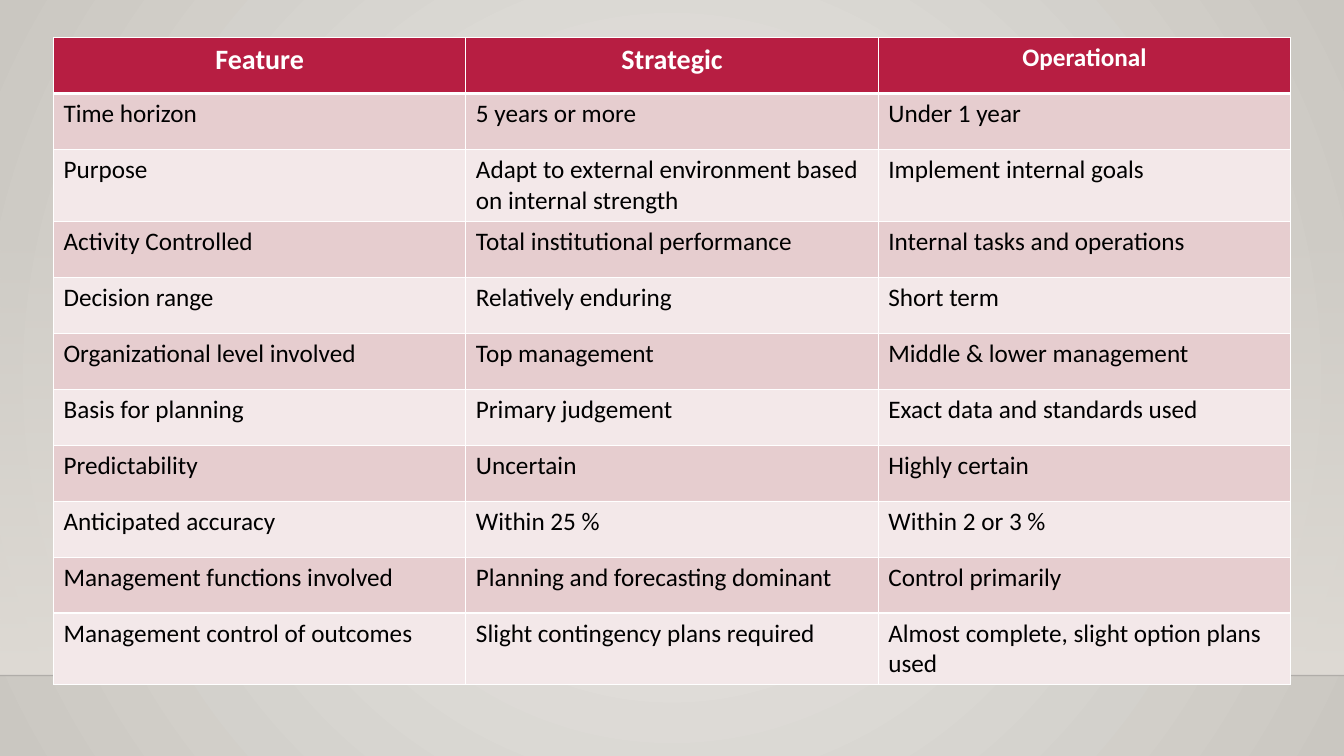
"""Build a slide with a table comparing strategic and operational planning."""
from lxml.etree import SubElement
from pptx import Presentation
from pptx.dml.color import RGBColor
from pptx.enum.shapes import MSO_CONNECTOR, MSO_SHAPE
from pptx.enum.text import PP_ALIGN
from pptx.oxml.ns import qn
from pptx.util import Pt

HEADINGS = [("Feature", 20), ("Strategic", 20), ("Operational", 18)]
FEATURES = [
    ("Time horizon", "5 years or more", "Under 1 year"),
    ("Purpose", "Adapt to external environment based on internal strength",
     "Implement internal goals"),
    ("Activity Controlled", "Total institutional performance",
     "Internal tasks and operations"),
    ("Decision range", "Relatively enduring", "Short term"),
    ("Organizational level involved", "Top management",
     "Middle & lower management"),
    ("Basis for planning", "Primary judgement", "Exact data and standards used"),
    ("Predictability", "Uncertain", "Highly certain"),
    ("Anticipated accuracy", "Within 25 %", "Within 2 or 3 %"),
    ("Management functions involved", "Planning and forecasting dominant",
     "Control primarily"),
    ("Management control of outcomes", "Slight contingency plans required",
     "Almost complete, slight option plans used"),
]

FONT = "Calibri"
BODY_SIZE = 18
CRIMSON = RGBColor(0xB7, 0x1E, 0x42)
ROSE = RGBColor(0xE6, 0xCD, 0xCF)
PALE_ROSE = RGBColor(0xF3, 0xE8, 0xE9)
WHITE = RGBColor(0xFF, 0xFF, 0xFF)
BLACK = RGBColor(0x00, 0x00, 0x00)
FLOOR_LINE = RGBColor(0x00, 0x00, 0x01)
WALL = RGBColor(0xDF, 0xDB, 0xD5)
GLOW = RGBColor(0xEC, 0xEA, 0xE7)
GLOW_EDGE = RGBColor(0xCA, 0xC7, 0xC1)

SLIDE_WIDTH, SLIDE_HEIGHT = 960, 540
WALL_TOP, FLOOR = 159, 482.5
TABLE_LEFT, TABLE_TOP = 38.2, 26.8
COLUMN_WIDTH, ROW_HEIGHT = 294.6, 40


def set_gradient(fill, start, end):
    fill.gradient()
    for stop, color in zip(fill.gradient_stops, (start, end)):
        stop.color.rgb = color


def set_alpha(color_element, percent):
    SubElement(color_element, qn("a:alpha"), val=str(percent * 1000))


def add_backdrop(slide):
    set_gradient(slide.background.fill, GLOW, GLOW_EDGE)
    linear = slide.element.find(".//" + qn("a:lin"))
    gradient = linear.getparent()
    gradient.remove(linear)
    circle = SubElement(gradient, qn("a:path"), {"path": "circle"})
    SubElement(circle, qn("a:fillToRect"), dict.fromkeys("ltrb", "50000"))

    wall = slide.shapes.add_shape(
        MSO_SHAPE.RECTANGLE, 0, Pt(WALL_TOP), Pt(SLIDE_WIDTH), Pt(FLOOR - WALL_TOP))
    wall.shadow.inherit = False
    wall.line.fill.background()
    set_gradient(wall.fill, WALL, WALL)
    wall.fill.gradient_angle = 270
    set_alpha(wall.element.spPr.find(".//" + qn("a:srgbClr")), 0)

    floor = slide.shapes.add_connector(
        MSO_CONNECTOR.STRAIGHT, 0, Pt(FLOOR), Pt(SLIDE_WIDTH), Pt(FLOOR))
    floor.line.color.rgb = FLOOR_LINE
    floor.line.width = Pt(1)
    set_alpha(floor.element.spPr.find(".//" + qn("a:srgbClr")), 20)
    SubElement(floor.element.spPr, qn("a:effectLst"))


def set_borders(cell, top, bottom):
    properties = cell._tc.get_or_add_tcPr()
    for side, width in (("L", 1), ("R", 1), ("T", top), ("B", bottom)):
        border = SubElement(properties, qn(f"a:ln{side}"), w=str(Pt(width)))
        SubElement(SubElement(border, qn("a:solidFill")), qn("a:srgbClr"), val=str(WHITE))


def fill_cell(cell, text, size, row):
    is_heading = row == 0
    set_borders(cell, 3 if row == 1 else 1, 3 if is_heading else 1)
    cell.fill.solid()
    cell.fill.fore_color.rgb = CRIMSON if is_heading else (PALE_ROSE, ROSE)[row % 2]
    cell.text = text
    paragraph = cell.text_frame.paragraphs[0]
    paragraph.alignment = PP_ALIGN.CENTER if is_heading else PP_ALIGN.LEFT
    paragraph.font.name = FONT
    paragraph.font.size = Pt(size)
    paragraph.font.bold = is_heading
    paragraph.font.color.rgb = WHITE if is_heading else BLACK


def add_comparison(slide):
    rows = [HEADINGS] + [[(text, BODY_SIZE) for text in feature] for feature in FEATURES]
    comparison = slide.shapes.add_table(
        len(rows), len(HEADINGS), Pt(TABLE_LEFT), Pt(TABLE_TOP),
        Pt(COLUMN_WIDTH * len(HEADINGS)), Pt(ROW_HEIGHT * len(rows))).table
    for row, entries in enumerate(rows):
        for column, (text, size) in enumerate(entries):
            fill_cell(comparison.cell(row, column), text, size, row)


def main():
    presentation = Presentation()
    presentation.slide_width = Pt(SLIDE_WIDTH)
    presentation.slide_height = Pt(SLIDE_HEIGHT)
    slide = presentation.slides.add_slide(presentation.slide_layouts[6])
    add_backdrop(slide)
    add_comparison(slide)
    presentation.save("out.pptx")


if __name__ == "__main__":
    main()
